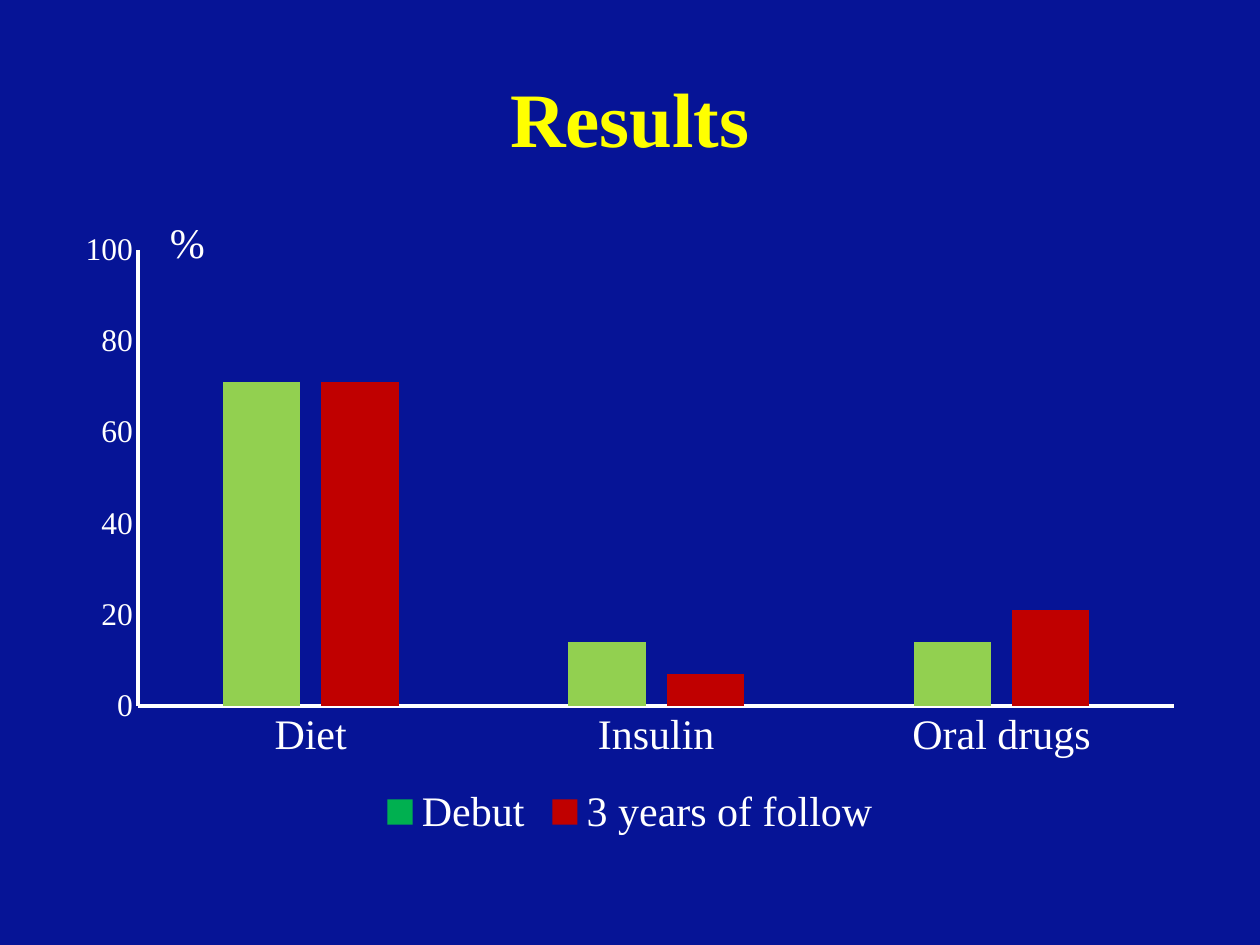
from dataclasses import dataclass
from typing import Optional

from pptx import Presentation
from pptx.chart.data import CategoryChartData
from pptx.dml.color import RGBColor
from pptx.enum.chart import XL_CHART_TYPE, XL_LEGEND_POSITION, XL_TICK_MARK
from pptx.enum.text import MSO_ANCHOR, MSO_AUTO_SIZE, PP_ALIGN
from pptx.util import Pt

EMU_PER_PX = 9144  # 100 px to the inch
FONT = "Times New Roman"

NAVY = RGBColor(0x06, 0x14, 0x96)
YELLOW = RGBColor(0xFF, 0xFF, 0x00)
WHITE = RGBColor(0xFF, 0xFF, 0xFF)
GREEN = RGBColor(0x00, 0xB0, 0x50)
LIGHT_GREEN = RGBColor(0x92, 0xD0, 0x50)
RED = RGBColor(0xC0, 0x00, 0x00)

CLUSTERED = XL_CHART_TYPE.COLUMN_CLUSTERED
BOTTOM = XL_LEGEND_POSITION.BOTTOM
NO_TICK = XL_TICK_MARK.NONE
TOP, MIDDLE = MSO_ANCHOR.TOP, MSO_ANCHOR.MIDDLE
LEFT, CENTER = PP_ALIGN.LEFT, PP_ALIGN.CENTER
GROW = MSO_AUTO_SIZE.SHAPE_TO_FIT_TEXT
FIXED = MSO_AUTO_SIZE.NONE


@dataclass(frozen=True)
class Box:
    left: int
    top: int
    width: int
    height: int

    def emu(self) -> tuple:
        return tuple(px(n) for n in (self.left, self.top, self.width, self.height))


@dataclass(frozen=True)
class TreatmentSeries:
    name: str
    values: tuple
    color: RGBColor
    bar_color: Optional[RGBColor] = None  # when bars differ from the legend key


CATEGORIES = ("Diet", "Insulin", "Oral drugs")
SERIES = (
    TreatmentSeries("Debut", (71, 14, 14), GREEN, LIGHT_GREEN),
    TreatmentSeries("3 years of follow", (71, 7, 21), RED),
)


def px(length: int) -> int:
    return length * EMU_PER_PX


def style_font(font, size: int, color: RGBColor, bold: bool = False) -> None:
    font.name = FONT
    font.size = Pt(size)
    font.bold = bold
    font.color.rgb = color


def fill_solid(fill, color: RGBColor) -> None:
    fill.solid()
    fill.fore_color.rgb = color


def add_text(slide, box: Box, text: str, *, size: int, color: RGBColor,
             bold: bool = False, align=LEFT, anchor=TOP,
             wrap: bool = True, auto_size=FIXED) -> None:
    frame = slide.shapes.add_textbox(*box.emu()).text_frame
    frame.word_wrap = wrap
    frame.auto_size = auto_size
    frame.vertical_anchor = anchor
    paragraph = frame.paragraphs[0]
    paragraph.alignment = align
    run = paragraph.add_run()
    run.text = text
    style_font(run.font, size, color, bold)


def style_axis(axis, size: int) -> None:
    axis.has_major_gridlines = False
    axis.major_tick_mark = NO_TICK
    axis.minor_tick_mark = NO_TICK
    axis.format.line.width = Pt(2)
    fill_solid(axis.format.line.fill, WHITE)
    style_font(axis.tick_labels.font, size, WHITE)


def add_results_chart(slide, box: Box) -> None:
    data = CategoryChartData()
    data.categories = CATEGORIES
    for series in SERIES:
        data.add_series(series.name, series.values)
    chart = slide.shapes.add_chart(CLUSTERED, *box.emu(), data).chart
    chart.has_title = False

    # Axes
    style_axis(chart.category_axis, 24)
    style_axis(chart.value_axis, 18)
    chart.value_axis.minimum_scale = 0
    chart.value_axis.maximum_scale = 100
    chart.value_axis.major_unit = 20

    # Legend
    chart.has_legend = True
    chart.legend.position = BOTTOM
    chart.legend.include_in_layout = False
    style_font(chart.legend.font, 24, WHITE)

    # Bars
    plot = chart.plots[0]
    plot.vary_by_categories = False
    plot.gap_width = 219
    plot.overlap = -27
    for bars, series in zip(plot.series, SERIES):
        bars.invert_if_negative = False
        fill_solid(bars.format.fill, series.color)
        if series.bar_color is not None:
            for index in range(len(series.values)):
                fill_solid(bars.points[index].format.fill, series.bar_color)


def main() -> None:
    presentation = Presentation()
    presentation.slide_width = px(1000)
    presentation.slide_height = px(750)
    slide = presentation.slides.add_slide(presentation.slide_layouts[6])
    fill_solid(slide.background.fill, NAVY)

    # Chart, title and unit of the value axis
    add_results_chart(slide, Box(50, 175, 900, 495))
    add_text(slide, Box(50, 30, 900, 125), "Results", size=44, color=YELLOW,
             bold=True, align=CENTER, anchor=MIDDLE)
    add_text(slide, Box(125, 167, 48, 50), "%", size=24, color=WHITE,
             wrap=False, auto_size=GROW)

    presentation.save("out.pptx")


if __name__ == "__main__":
    main()
